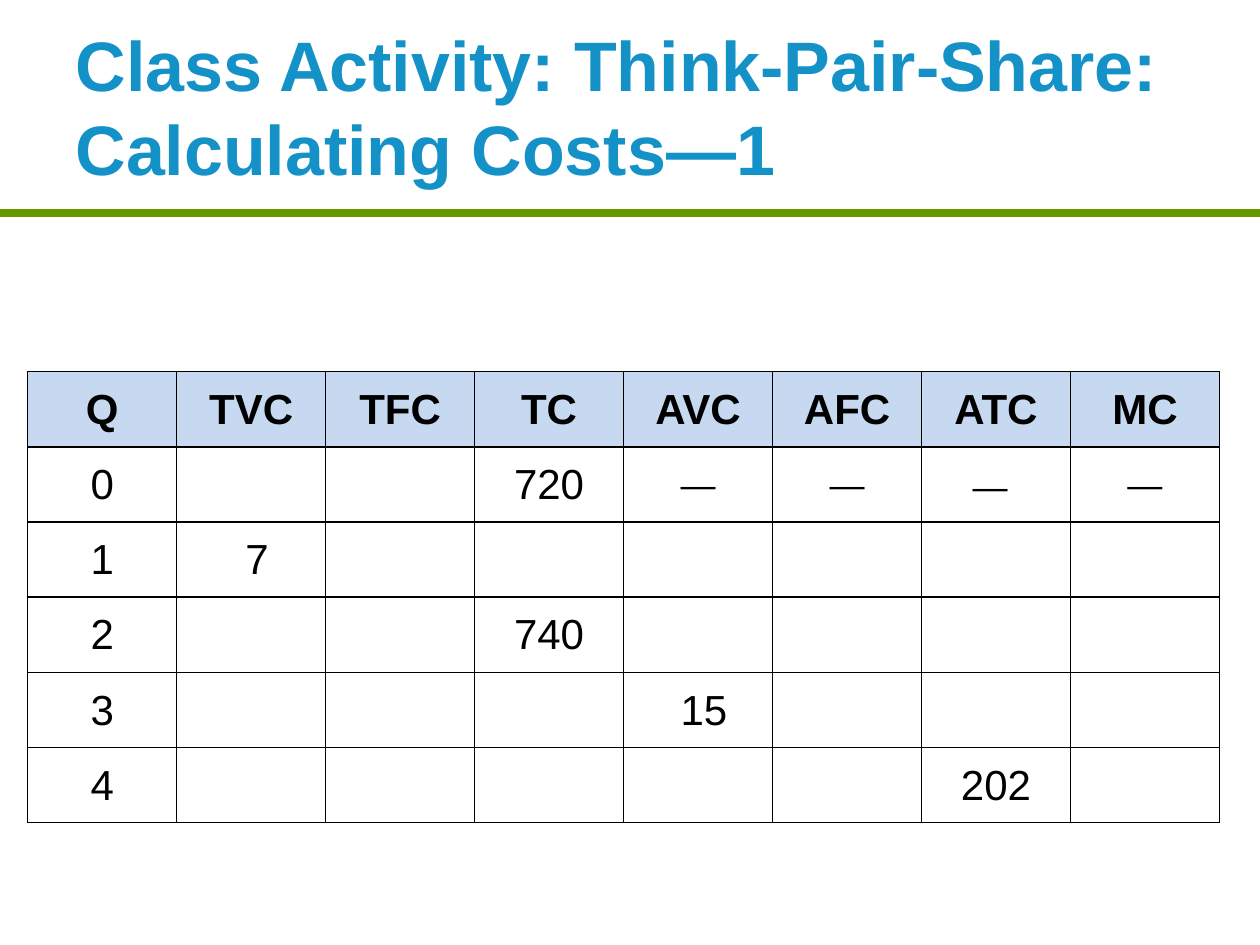
"""Build the class activity slide on calculating costs."""
import lxml.etree
import pptx
import pptx.dml.color
import pptx.enum.shapes
import pptx.enum.text
import pptx.oxml.ns
import pptx.util

TITLE_BLUE = pptx.dml.color.RGBColor(0x14, 0x92, 0xC7)
DASH_BLUE = pptx.dml.color.RGBColor(0x13, 0x92, 0xC8)
RULE_GREEN = pptx.dml.color.RGBColor(0x66, 0x99, 0x00)
HEADER_FILL = pptx.dml.color.RGBColor(0xC6, 0xD9, 0xF1)
BLACK = pptx.dml.color.RGBColor(0x00, 0x00, 0x00)

HEADERS = ["Q", "TVC", "TFC", "TC", "AVC", "AFC", "ATC", "MC"]
COSTS = [
    {"Q": "0", "TC": "720", "AVC": "—", "AFC": "—", "ATC": "— ", "MC": "—"},
    {"Q": "1", "TVC": " 7"},
    {"Q": "2", "TC": "740"},
    {"Q": "3", "AVC": " 15"},
    {"Q": "4", "ATC": "202"},
]


class SlideBuilder:
    """Hold the style and the current slide; lengths are shares of the slide."""

    font_name = "Arial"
    title_size = 40
    cell_size = 24
    dash_size = 20

    def __init__(self, presentation):
        self.width = presentation.slide_width
        self.height = presentation.slide_height
        self.slide = presentation.slides.add_slide(presentation.slide_layouts[5])

    def place(self, left, top, width, height):
        """Return the lengths of a box given as shares."""
        return (int(left * self.width), int(top * self.height),
                int(width * self.width), int(height * self.height))

    def add_run(self, paragraph, text, size, color, bold):
        """Append one formatted run."""
        run = paragraph.add_run()
        run.text = text
        run.font.name = self.font_name
        run.font.size = pptx.util.Pt(size)
        run.font.bold = bold
        run.font.color.rgb = color

    def add_title(self, parts, box):
        """Move the title placeholder and fill it with coloured runs."""
        shape = self.slide.shapes.title
        shape.left, shape.top, shape.width, shape.height = self.place(*box)
        frame = shape.text_frame
        frame.word_wrap = True
        frame.auto_size = pptx.enum.text.MSO_AUTO_SIZE.NONE
        frame.vertical_anchor = pptx.enum.text.MSO_ANCHOR.MIDDLE
        paragraph = frame.paragraphs[0]
        paragraph.alignment = pptx.enum.text.PP_ALIGN.LEFT
        paragraph.line_spacing = pptx.util.Pt(48)
        for text, color in parts:
            self.add_run(paragraph, text, self.title_size, color, True)

    def add_rule(self, top, color, weight):
        """Draw a line across the whole slide."""
        y = int(top * self.height)
        line = self.slide.shapes.add_connector(
            pptx.enum.shapes.MSO_CONNECTOR.STRAIGHT, 0, y, self.width, y)
        line.line.color.rgb = color
        line.line.width = pptx.util.Pt(weight)
        lxml.etree.SubElement(line._element.spPr, pptx.oxml.ns.qn("a:effectLst"))

    def add_borders(self, cell):
        """Give a cell a thin black line on each side."""
        properties = cell._tc.get_or_add_tcPr()
        for index, side in enumerate(("lnL", "lnR", "lnT", "lnB")):
            border = pptx.oxml.parse_xml(
                f'<a:{side} {pptx.oxml.ns.nsdecls("a")} w="12700"><a:solidFill>'
                f'<a:srgbClr val="{BLACK}"/></a:solidFill></a:{side}>')
            properties.insert(index, border)

    def fill_cell(self, cell, text, is_header):
        """Format a cell and write its text."""
        cell.vertical_anchor = pptx.enum.text.MSO_ANCHOR.MIDDLE
        cell.margin_left = cell.margin_right = cell.margin_top = pptx.util.Inches(0.01)
        cell.margin_bottom = 0
        if is_header:
            cell.fill.solid()
            cell.fill.fore_color.rgb = HEADER_FILL
        else:
            cell.fill.background()
        self.add_borders(cell)
        paragraph = cell.text_frame.paragraphs[0]
        paragraph.alignment = pptx.enum.text.PP_ALIGN.CENTER
        dash, rest = ("—", text[1:]) if text.startswith("—") else ("", text)
        for part, size in ((dash, self.dash_size), (rest, self.cell_size)):
            if part:
                self.add_run(paragraph, part, size, BLACK, is_header)

    def add_table(self, headers, records, box):
        """Draw a table with equal columns and rows."""
        rows = [headers] + [[record.get(name, "") for name in headers] for record in records]
        frame = self.slide.shapes.add_table(len(rows), len(headers), *self.place(*box))
        table = frame.table
        table.first_row = table.horz_banding = False
        for row_index, row in enumerate(rows):
            for column_index, text in enumerate(row):
                self.fill_cell(table.cell(row_index, column_index), text, row_index == 0)


def main():
    """Create and save the presentation."""
    presentation = pptx.Presentation()
    presentation.slide_width = pptx.util.Inches(10)
    presentation.slide_height = pptx.util.Inches(7.5)
    builder = SlideBuilder(presentation)
    builder.add_rule(1.69 / 7.5, RULE_GREEN, 4.5)
    builder.add_title(
        [("Class Activity: Think-Pair-Share: Calculating Costs", TITLE_BLUE), ("—1", DASH_BLUE)],
        (0.05, 0, 0.9, 1.67 / 7.5))
    builder.add_table(HEADERS, COSTS, (0.022, 2.95 / 7.5, 0.946, 3.58 / 7.5))
    presentation.save("out.pptx")


if __name__ == "__main__":
    main()
